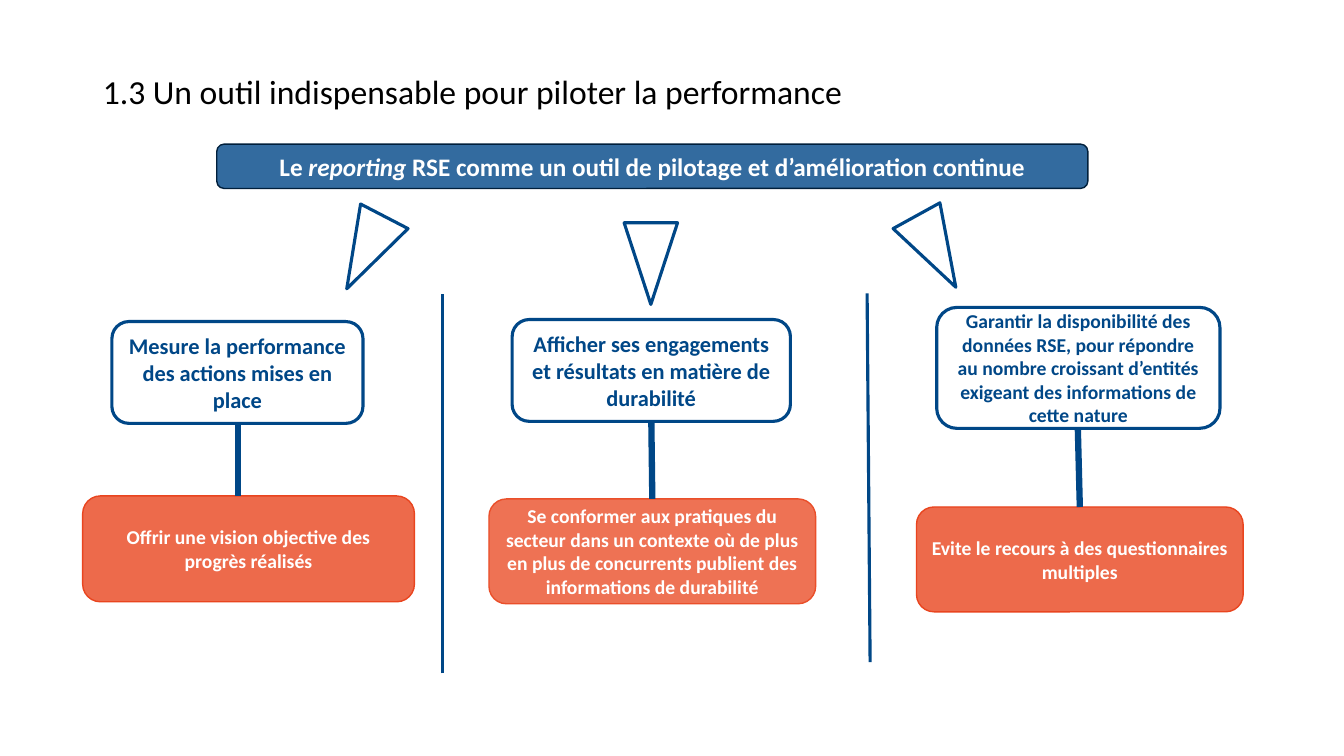
from lxml import etree
from pptx import Presentation
from pptx.dml.color import RGBColor
from pptx.enum.shapes import MSO_CONNECTOR, MSO_SHAPE
from pptx.enum.text import MSO_ANCHOR, MSO_AUTO_SIZE, PP_ALIGN
from pptx.oxml.ns import qn
from pptx.util import Pt

PX = 9144
ROUND = MSO_SHAPE.ROUNDED_RECTANGLE
TRIANGLE = MSO_SHAPE.ISOSCELES_TRIANGLE
STRAIGHT = MSO_CONNECTOR.STRAIGHT
MIDDLE = MSO_ANCHOR.MIDDLE
CENTER = PP_ALIGN.CENTER
LEFT = PP_ALIGN.LEFT
NO_FIT = MSO_AUTO_SIZE.NONE
HEX = {"blue": "004787", "navy": "001F3B", "red": "E9451F",
       "coral": "EA4F2A", "white": "FFFFFF", "black": "000000"}
COLORS = {name: RGBColor.from_string(code) for name, code in HEX.items()}


def add_box(kind, place, line, width, fill=None):
    box = slide.shapes.add_shape(kind, *[v * PX for v in place])
    box.shadow.inherit = False
    box.line.color.rgb = COLORS[line]
    box.line.width = Pt(width)
    if fill:
        box.fill.solid()
        box.fill.fore_color.rgb = COLORS[fill]
        tint = box.fill._xPr.find(qn("a:solidFill"))[0]
        etree.SubElement(tint, qn("a:alpha")).set("val", "80000")
    else:
        box.fill.background()
    return box


def set_text(shape, parts, size, color, bold=True, align=CENTER):
    frame = shape.text_frame
    frame.word_wrap = True
    frame.auto_size = NO_FIT
    frame.vertical_anchor = MIDDLE
    para = frame.paragraphs[0]
    para.alignment = align
    for text in parts:
        run = para.add_run()
        run.text = text
        run.font.name = "Calibri"
        run.font.size = Pt(size)
        run.font.bold = bold
        run.font.color.rgb = COLORS[color]
    return para


deck = Presentation()
deck.slide_width = 1333 * PX
deck.slide_height = 750 * PX
slide = deck.slides.add_slide(deck.slide_layouts[5])

title = slide.shapes.title
title.left, title.top, title.width, title.height = [
    v * PX for v in (92, 40, 1150, 145)]
para = set_text(title, ["1.3 Un outil indispensable pour piloter la performance"],
                24, "black", False, LEFT)
para.line_spacing = 0.9
title.text_frame.margin_bottom = 45 * PX

banner = add_box(ROUND, (215, 143, 864, 44), "navy", 1, "blue")
para = set_text(banner, ["Le ", "reporting ",
                         "RSE comme un outil de pilotage et d’amélioration continue"],
                18, "white")
para.runs[1].font.italic = True

goals = [
    ((111, 319, 249, 101), 16, "Mesure la performance des actions mises en place"),
    ((508, 317, 276, 101), 16,
     "Afficher ses engagements et résultats en matière de durabilité"),
    ((929, 305, 281, 120), 14,
     "Garantir la disponibilité des données RSE, pour répondre au nombre "
     "croissant d’entités exigeant des informations de cette nature"),
]
for place, size, text in goals:
    set_text(add_box(ROUND, place, "blue", 2.25), [text], size, "blue")

gains = [
    ((82, 492, 329, 105), "red", "Offrir une vision objective des progrès réalisés"),
    ((485, 495, 324, 104), "coral",
     "Se conformer aux pratiques du secteur dans un contexte où de plus en plus "
     "de concurrents publient des informations de durabilité"),
    ((909, 503, 324, 104), "red", "Evite le recours à des questionnaires multiples"),
]
for place, color, text in gains:
    set_text(add_box(ROUND, place, color, 1, color), [text], 14, "white")

for left, top, angle in [(336, 210, 207.4), (619, 221, 180), (902, 209, 151.2)]:
    add_box(TRIANGLE, (left, top, 53, 81), "blue", 2.25).rotation = angle

lines = [
    ((439, 668, 439, 292), 2.25),
    ((863, 657, 860, 291), 2.25),
    ((236, 420, 236, 492), 4.5),
    ((646, 417, 647, 495), 4.5),
    ((1069, 424, 1071, 503), 4.5),
]
for ends, width in lines:
    line = slide.shapes.add_connector(STRAIGHT, *[v * PX for v in ends])
    line.line.color.rgb = COLORS["blue"]
    line.line.width = Pt(width)
    etree.SubElement(line._element.spPr, qn("a:effectLst"))

deck.save("out.pptx")
